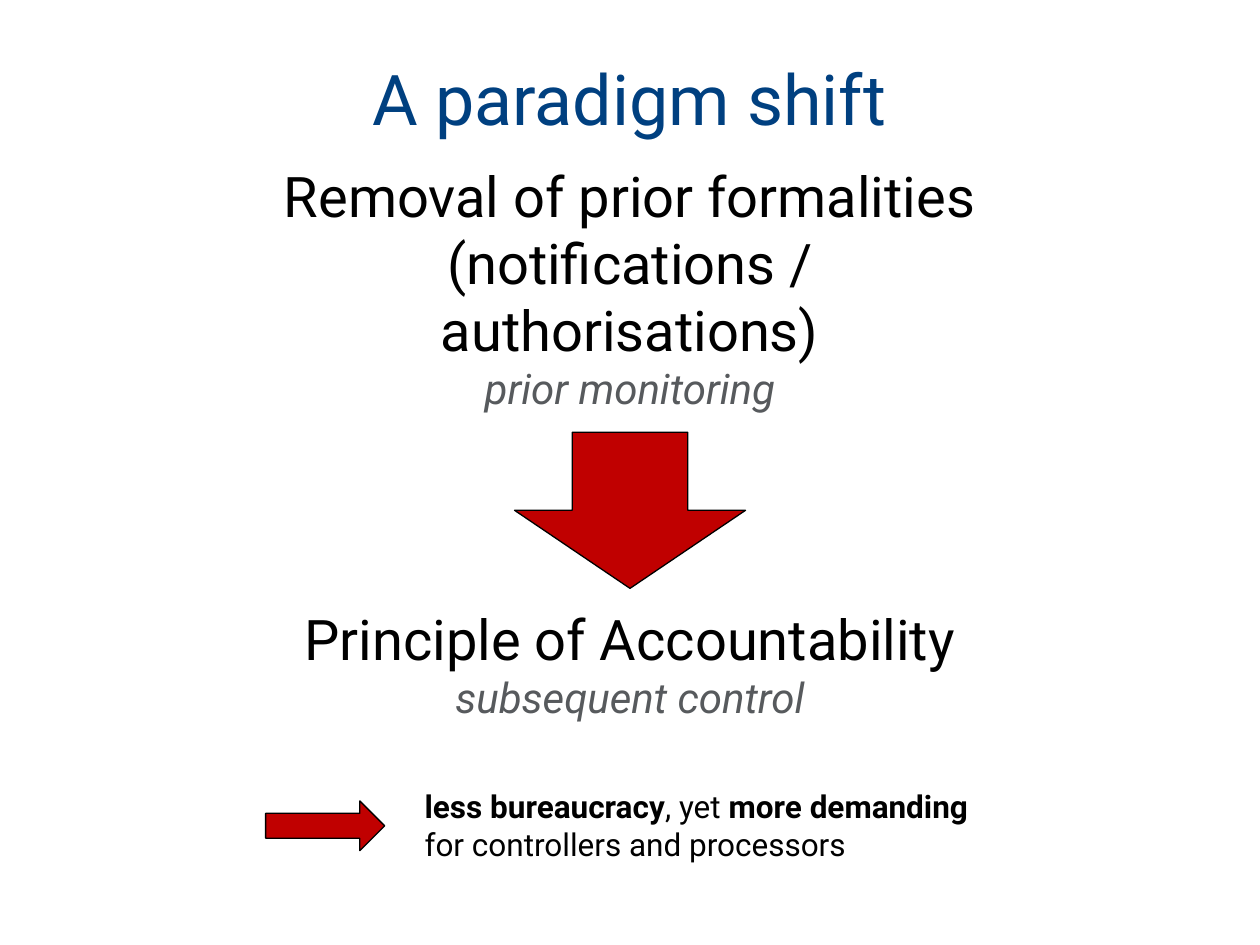
from pptx import Presentation
from pptx.dml.color import RGBColor
from pptx.enum.shapes import MSO_SHAPE
from pptx.enum.text import MSO_ANCHOR, PP_ALIGN
from pptx.util import Pt

FONT = "Roboto"
BLUE = RGBColor(0x00, 0x40, 0x80)
BLACK = RGBColor(0x00, 0x00, 0x00)
GREY = RGBColor(0x57, 0x5A, 0x5D)
RED = RGBColor(0xC0, 0x00, 0x00)

TITLE = ("A paradigm shift", (25.2, 23, 668.9, 65.5))
STAGES = [
    ("Removal of prior formalities (notifications / authorisations)",
     "prior monitoring", (147.4, 88.6, 425.2, 152.6)),
    ("Principle of Accountability",
     "subsequent control", (87.8, 342, 544.4, 74.9)),
]
ARROWS = [
    (MSO_SHAPE.DOWN_ARROW, (294, 247, 132, 89.2)),
    (MSO_SHAPE.RIGHT_ARROW, (151.8, 457.7, 68, 28.4)),
]
CONCLUSION = [
    ("less bureaucracy", True),
    (", yet ", False),
    ("more demanding ", True),
    ("for controllers and processors", False),
]
CONCLUSION_BOX = (235.6, 446.4, 345.6, 51.1)


def points(box):
    return [Pt(length) for length in box]


def style(run, size, color, bold=False, italic=False):
    font = run.font
    font.name, font.size, font.color.rgb = FONT, Pt(size), color
    font.bold, font.italic = bold, italic


def add_text_frame(slide, box):
    frame = slide.shapes.add_textbox(*points(box)).text_frame
    frame.word_wrap = True
    return frame


def add_title(slide):
    text, box = TITLE
    title = slide.shapes.title
    title.left, title.top, title.width, title.height = points(box)
    title.text_frame.text = text
    title.text_frame.vertical_anchor = MSO_ANCHOR.MIDDLE
    heading = title.text_frame.paragraphs[0]
    heading.alignment = PP_ALIGN.CENTER
    style(heading.runs[0], 40, BLUE)


def add_stage(slide, principle, control, box):
    frame = add_text_frame(slide, box)
    frame.text = f"{principle}\n{control}"
    for paragraph in frame.paragraphs:
        paragraph.alignment = PP_ALIGN.CENTER
    style(frame.paragraphs[0].runs[0], 32, BLACK)
    style(frame.paragraphs[1].runs[0], 24, GREY, italic=True)


def add_arrow(slide, preset, box):
    arrow = slide.shapes.add_shape(preset, *points(box))
    arrow.shadow.inherit = False
    arrow.fill.solid()
    arrow.fill.fore_color.rgb = RED
    arrow.line.color.rgb = BLACK
    arrow.line.width = Pt(0.75)


def add_conclusion(slide):
    sentence = add_text_frame(slide, CONCLUSION_BOX).paragraphs[0]
    for words, bold in CONCLUSION:
        run = sentence.add_run()
        run.text = words
        style(run, 18, BLACK, bold=bold)


def main():
    deck = Presentation()
    deck.slide_width, deck.slide_height = Pt(720), Pt(540)
    slide = deck.slides.add_slide(deck.slide_layouts[5])
    add_title(slide)
    for stage in STAGES:
        add_stage(slide, *stage)
    for preset, box in ARROWS:
        add_arrow(slide, preset, box)
    add_conclusion(slide)
    deck.save("out.pptx")


if __name__ == "__main__":
    main()
